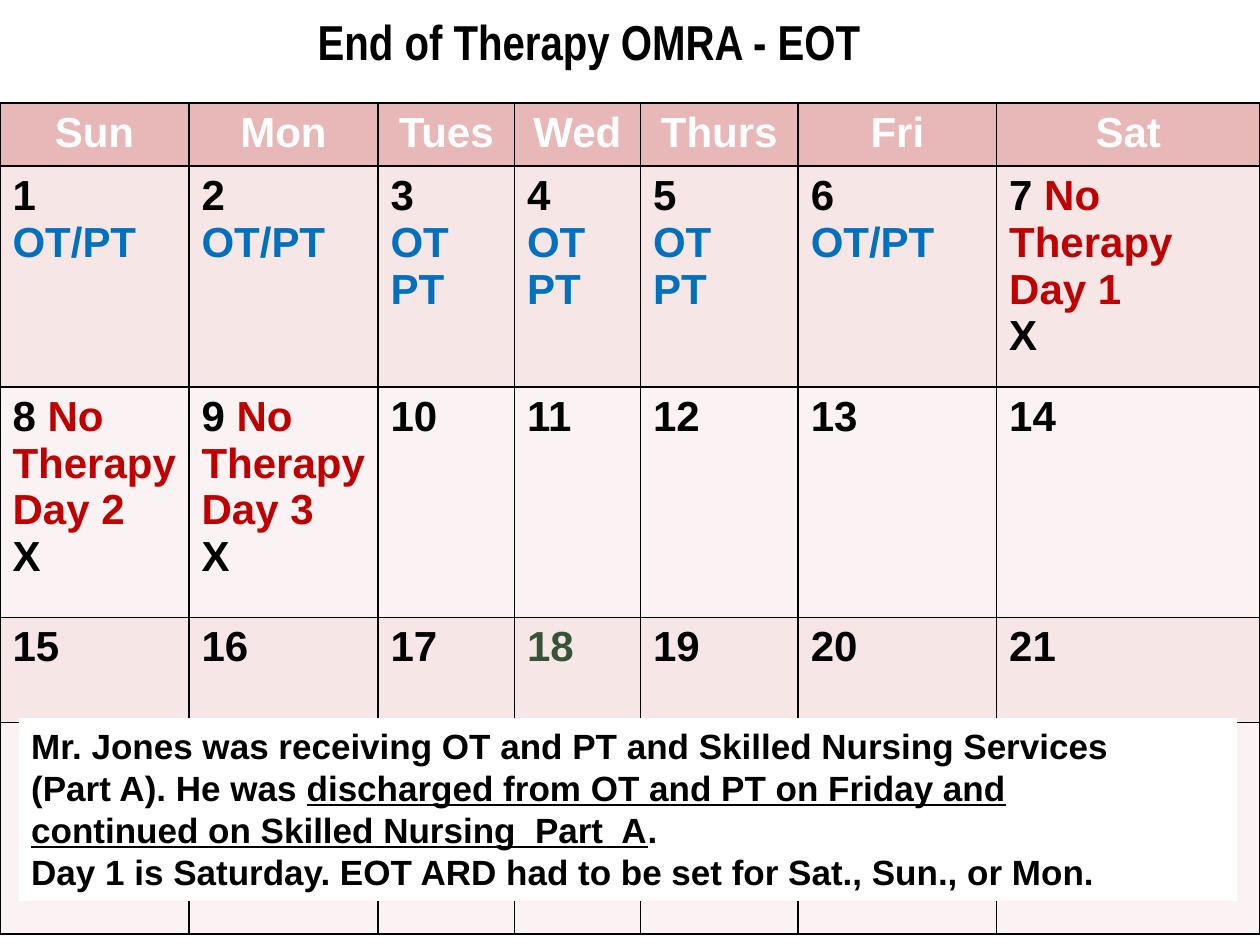
from lxml.etree import SubElement
from pptx import Presentation
from pptx.dml.color import RGBColor
from pptx.enum.shapes import MSO_SHAPE
from pptx.enum.text import MSO_ANCHOR, PP_ALIGN
from pptx.oxml.ns import qn
from pptx.util import Cm, Pt

BLACK, WHITE, BLUE, RED, GREEN = "000000", "FFFFFF", "0070C0", "C00000", "375439"
HEADER_FILL, ROW_FILLS = "E8B7B7", ("F6E6E6", "FBF3F3")

TITLE = "End of Therapy OMRA - EOT"
WEEKDAYS = ["Sun", "Mon", "Tues", "Wed", "Thurs", "Fri", "Sat"]
LAST_DAY = 21
THERAPY = {1: ["OT/PT"], 2: ["OT/PT"], 3: ["OT", "PT"], 4: ["OT", "PT"],
           5: ["OT", "PT"], 6: ["OT/PT"]}
NO_THERAPY = {7: "No Therapy Day 1", 8: "No Therapy Day 2", 9: "No Therapy Day 3"}
DAY_COLORS = {18: GREEN}
UNDERLINED = {"underline": True}
EXPLANATION = [
    [("Mr. Jones was receiving OT and PT and Skilled Nursing Services", {})],
    [("(Part A). He was ", {}), ("discharged from OT and PT on Friday and", UNDERLINED)],
    [("continued on Skilled Nursing  Part  A", UNDERLINED), (".", {})],
    [("Day 1 is Saturday. EOT ARD had to be set for Sat., Sun., or Mon.", {})],
]
COLUMN_WIDTHS = [3.81, 3.81, 2.75, 2.54, 3.18, 4, 5.31]
ROW_HEIGHTS = [1.27, 4.45, 4.65, 2.11, 4.27]


def rgb(value):
    return RGBColor.from_string(value)


def fill(target, color):
    target.fill.solid()
    target.fill.fore_color.rgb = rgb(color)


def write(frame, paragraphs, size=24, font="Arial", color=BLACK, align=PP_ALIGN.LEFT):
    for index, runs in enumerate(paragraphs):
        paragraph = frame.add_paragraph() if index else frame.paragraphs[0]
        paragraph.alignment = align
        for text, style in runs:
            run = paragraph.add_run()
            run.text = text
            run.font.name, run.font.size, run.font.bold = font, Pt(size), True
            run.font.color.rgb = rgb(style.get("color", color))
            run.font.underline = style.get("underline", False)


def add_borders(cell):
    properties = cell._tc.get_or_add_tcPr()
    for position, side in enumerate(("lnL", "lnR", "lnT", "lnB")):
        line = properties.makeelement(qn(f"a:{side}"), {"w": str(Pt(1))})
        solid = SubElement(line, qn("a:solidFill"))
        SubElement(solid, qn("a:srgbClr"), val=BLACK)
        properties.insert(position, line)


def day_paragraphs(day):
    number = (str(day), {"color": DAY_COLORS.get(day, BLACK)})
    if day in NO_THERAPY:
        return [[(f"{day} ", {}), (NO_THERAPY[day], {"color": RED})], [("X", {})]]
    return [[number]] + [[(therapy, {"color": BLUE})] for therapy in THERAPY.get(day, [])]


def add_calendar(slide):
    calendar = slide.shapes.add_table(
        len(ROW_HEIGHTS), len(WEEKDAYS), Cm(0), Cm(2.08),
        Cm(sum(COLUMN_WIDTHS)), Cm(sum(ROW_HEIGHTS))).table
    for column, width in zip(calendar.columns, COLUMN_WIDTHS):
        column.width = Cm(width)
    for week, height in enumerate(ROW_HEIGHTS):
        calendar.rows[week].height = Cm(height)
        for weekday, name in enumerate(WEEKDAYS):
            cell = calendar.cell(week, weekday)
            fill(cell, ROW_FILLS[(week - 1) % 2] if week else HEADER_FILL)
            add_borders(cell)
            day = (week - 1) * len(WEEKDAYS) + weekday + 1
            if week == 0:
                write(cell.text_frame, [[(name, {})]], color=WHITE, align=PP_ALIGN.CENTER)
            elif day <= LAST_DAY:
                write(cell.text_frame, day_paragraphs(day))


def add_title(slide):
    title = slide.shapes.title
    title.left, title.top, title.width, title.height = Cm(6.15), Cm(0.1), Cm(11.56), Cm(1.45)
    title.text_frame.word_wrap = False
    title.text_frame.vertical_anchor = MSO_ANCHOR.TOP
    write(title.text_frame, [[(TITLE, {})]], size=28, font="Arial Narrow")


def add_explanation(slide):
    explanation = slide.shapes.add_shape(
        MSO_SHAPE.RECTANGLE, Cm(0.38), Cm(14.48), Cm(24.56), Cm(3.68))
    explanation.shadow.inherit = False
    fill(explanation, WHITE)
    explanation.line.fill.background()
    explanation.text_frame.word_wrap = True
    explanation.text_frame.vertical_anchor = MSO_ANCHOR.TOP
    write(explanation.text_frame, EXPLANATION, size=20)


def main():
    """Build the therapy calendar slide."""
    deck = Presentation()
    deck.slide_width, deck.slide_height = Cm(25.4), Cm(19.05)
    slide = deck.slides.add_slide(deck.slide_layouts[5])
    add_title(slide)
    add_calendar(slide)
    add_explanation(slide)
    deck.save("out.pptx")


if __name__ == "__main__":
    main()
